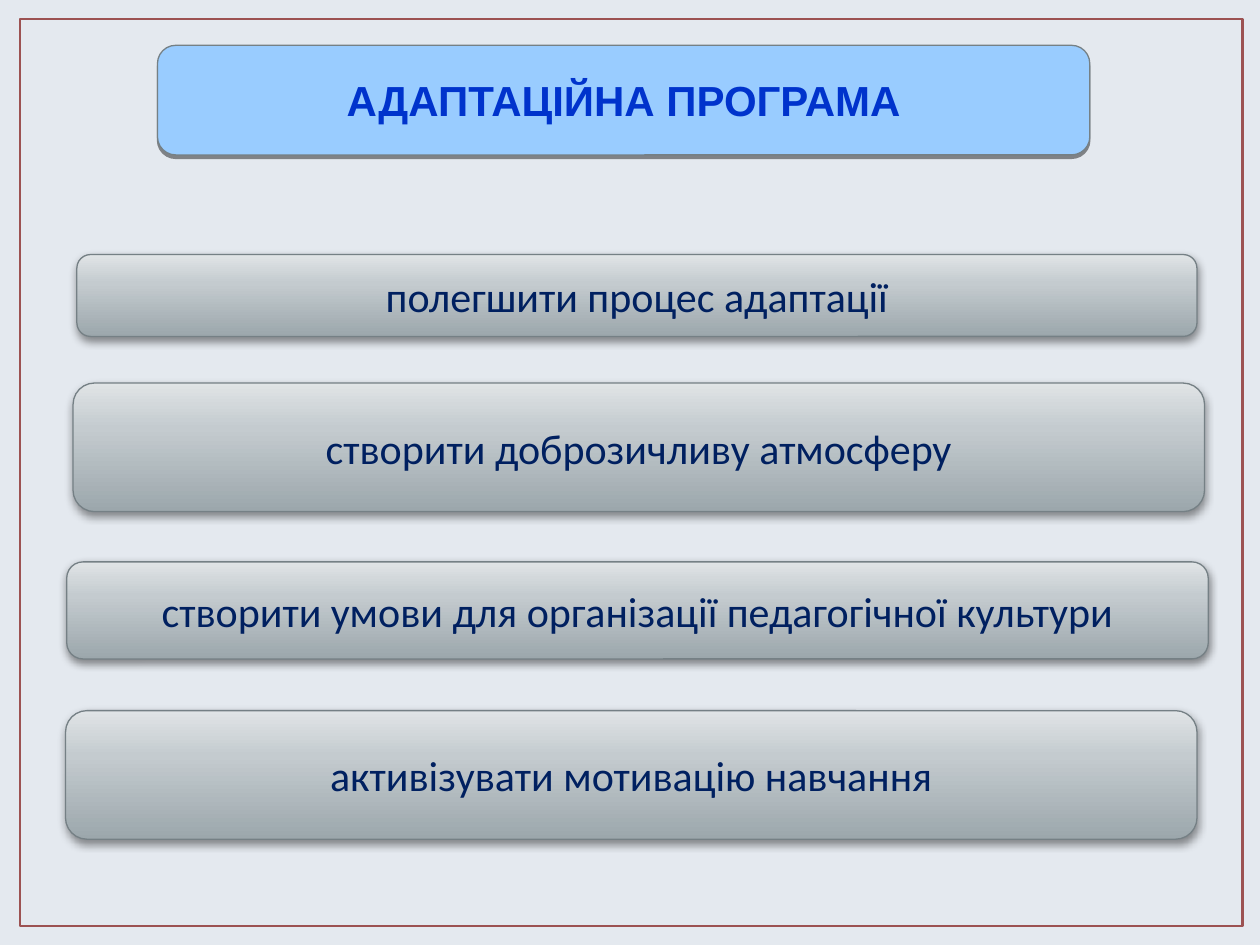
from lxml import etree
from pptx import Presentation
from pptx.dml.color import RGBColor
from pptx.enum.shapes import MSO_SHAPE
from pptx.enum.text import MSO_ANCHOR, PP_ALIGN
from pptx.oxml.ns import qn
from pptx.util import Inches, Pt

RECTANGLE = MSO_SHAPE.RECTANGLE
ROUNDED = MSO_SHAPE.ROUNDED_RECTANGLE
MIDDLE = MSO_ANCHOR.MIDDLE
CENTER = PP_ALIGN.CENTER

BACKGROUND = RGBColor(0xE4, 0xE9, 0xEF)
FRAME_RED = RGBColor(0x9C, 0x52, 0x52)
OUTLINE = RGBColor(0x75, 0x80, 0x85)
TITLE_FILL = RGBColor(0x99, 0xCC, 0xFF)
TITLE_BLUE = RGBColor(0x00, 0x33, 0xCC)
GOAL_BLUE = RGBColor(0x00, 0x20, 0x60)
SHADOW = RGBColor(0x00, 0x00, 0x00)
GOAL_STOPS = [
    (0, RGBColor(0x9C, 0xA7, 0xAC)),
    (65, RGBColor(0xC4, 0xCB, 0xCF)),
    (100, RGBColor(0xE0, 0xE4, 0xE6)),
]

# Grid of square cells covering the slide
COLUMNS, ROWS = 100, 75

# Goals: text, then left column, top row, width and height in cells
GOALS = [
    ("полегшити процес адаптації", (6.1, 20.2, 88.9, 6.5)),
    ("створити доброзичливу атмосферу", (5.8, 30.4, 89.8, 10.2)),
    ("створити умови для організації педагогічної культури",
     (5.3, 44.6, 90.6, 7.7)),
    ("активізувати мотивацію навчання", (5.2, 56.4, 89.8, 10.2)),
]


class SlideBuilder:
    """Holds the style and the current slide."""

    text_size = Pt(24)
    title_font = "Arial"
    goal_font = "Calibri"

    def __init__(self, presentation):
        self.cell_width = presentation.slide_width / COLUMNS
        self.cell_height = presentation.slide_height / ROWS
        self.slide = presentation.slides.add_slide(presentation.slide_layouts[6])
        background = self.slide.background.fill
        background.solid()
        background.fore_color.rgb = BACKGROUND

    def _outlined(self, kind, cells, color, width):
        left, top, across, down = cells
        shape = self.slide.shapes.add_shape(
            kind,
            round(left * self.cell_width), round(top * self.cell_height),
            round(across * self.cell_width), round(down * self.cell_height))
        shape.shadow.inherit = False
        shape.line.color.rgb = color
        shape.line.width = Pt(width)
        return shape

    def _drop_shadow(self, shape, blur):
        effects = shape._element.spPr.find(qn("a:effectLst"))
        shadow = etree.SubElement(
            effects, qn("a:outerShdw"), blurRad=str(Pt(blur)), dist=str(Pt(2)),
            dir="5400000", algn="ctr", rotWithShape="0")
        color = etree.SubElement(shadow, qn("a:srgbClr"), val=str(SHADOW))
        etree.SubElement(color, qn("a:alpha"), val="43000")

    def _gradient(self, shape, stops):
        shape.fill.gradient()
        shape.fill.gradient_angle = 90
        stop_list = shape._element.spPr.find(qn("a:gradFill")).find(qn("a:gsLst"))
        for stop in list(stop_list):
            stop_list.remove(stop)
        for percent, color in stops:
            stop = etree.SubElement(stop_list, qn("a:gs"), pos=str(percent * 1000))
            etree.SubElement(stop, qn("a:srgbClr"), val=str(color))

    def _label(self, shape, text, font_name, color, bold=False):
        frame = shape.text_frame
        frame.word_wrap = True
        frame.vertical_anchor = MIDDLE
        paragraph = frame.paragraphs[0]
        paragraph.alignment = CENTER
        run = paragraph.add_run()
        run.text = text
        run.font.name = font_name
        run.font.size = self.text_size
        run.font.bold = bold
        run.font.color.rgb = color

    def frame(self, cells):
        border = self._outlined(RECTANGLE, cells, FRAME_RED, 1.5)
        border.fill.background()

    def goal(self, text, cells):
        panel = self._outlined(ROUNDED, cells, OUTLINE, 0.75)
        self._gradient(panel, GOAL_STOPS)
        self._drop_shadow(panel, blur=5)
        self._label(panel, text, self.goal_font, GOAL_BLUE)

    def title(self, text, cells):
        banner = self._outlined(ROUNDED, cells, OUTLINE, 0.75)
        banner.fill.solid()
        banner.fill.fore_color.rgb = TITLE_FILL
        self._drop_shadow(banner, blur=0)
        self._label(banner, text, self.title_font, TITLE_BLUE, bold=True)


def main():
    presentation = Presentation()
    presentation.slide_width = Inches(10)
    presentation.slide_height = Inches(7.5)
    builder = SlideBuilder(presentation)

    # Border around the slide
    builder.frame((1.6, 1.5, 97, 72))

    # Goals of the programme
    for text, cells in GOALS:
        builder.goal(text, cells)

    # Title banner
    builder.title("АДАПТАЦІЙНА ПРОГРАМА", (12.5, 3.6, 74, 8.7))

    presentation.save("out.pptx")


if __name__ == "__main__":
    main()
